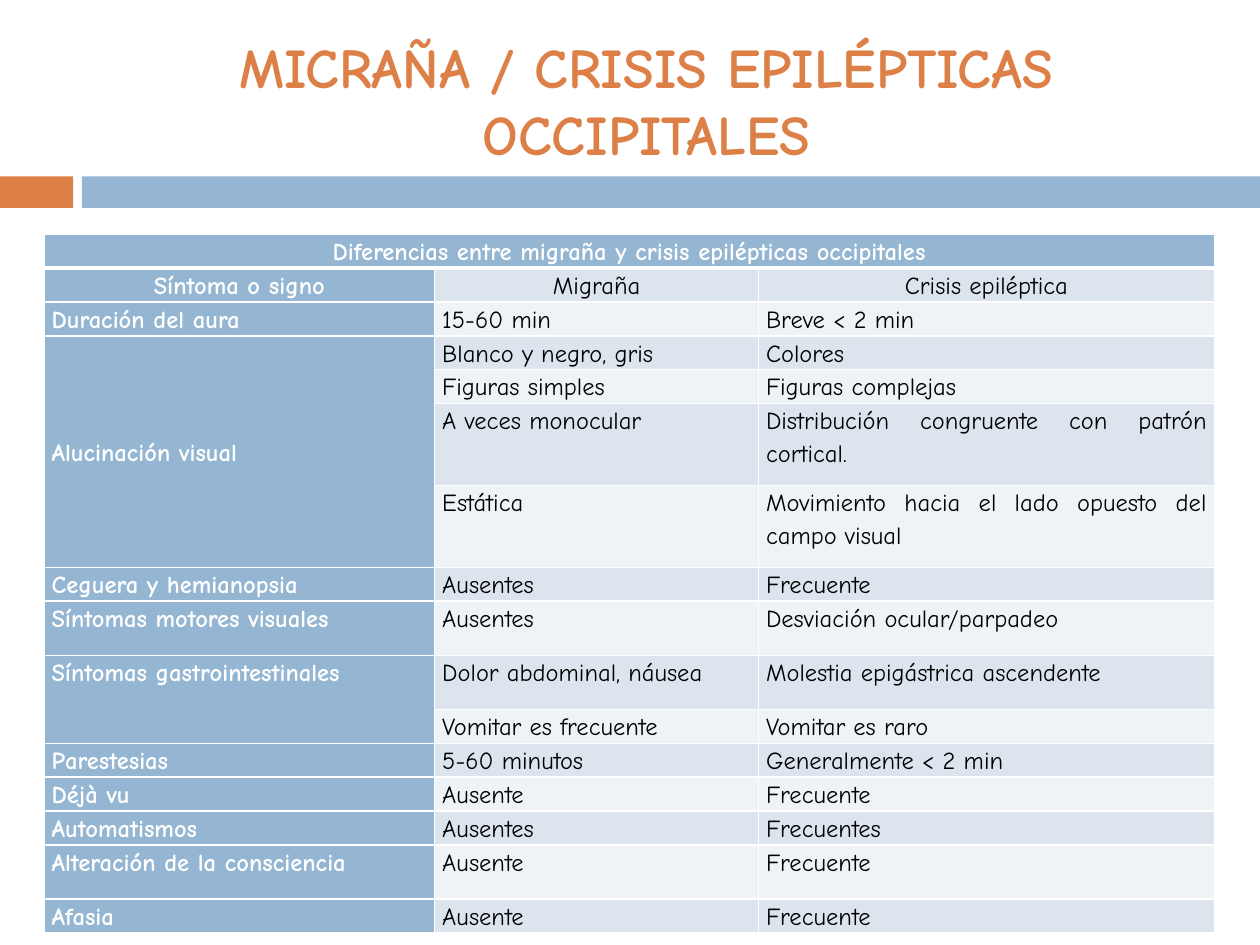
from dataclasses import dataclass

import pptx
import pptx.dml.color
import pptx.enum.shapes
import pptx.enum.text
import pptx.oxml
import pptx.oxml.ns
import pptx.util
from pptx.util import Inches, Pt

ALIGN = pptx.enum.text.PP_ALIGN
ANCHOR = pptx.enum.text.MSO_ANCHOR
WIDTH, HEIGHT = Inches(10), Inches(7.5)


@dataclass(frozen=True)
class Theme:
    font: str = "Comic Neue"
    title_size: int = 32
    body_size: int = 14
    orange: str = "DD8047"
    blue: str = "94B6D2"
    band_dark: str = "DCE5EE"
    band_light: str = "EEF3F7"
    white: str = "FFFFFF"
    black: str = "000000"


@dataclass(frozen=True)
class Area:
    left: float
    top: float
    width: float
    height: float

    def emu(self) -> tuple[int, int, int, int]:
        return (round(self.left * WIDTH), round(self.top * HEIGHT),
                round(self.width * WIDTH), round(self.height * HEIGHT))


@dataclass(frozen=True)
class Finding:
    symptom: str
    migraine: str
    seizure: str
    lines: int = 1
    symptom_rows: int = 1


THEME = Theme()
LINE_HEIGHTS = {1: 0.22, 2: 0.43, 3: 0.65}
COLUMN_WIDTHS = (3.1, 2.57, 3.62)
TITLE = "MICRAÑA / CRISIS EPILÉPTICAS OCCIPITALES"
TABLE_HEADING = "Diferencias entre migraña y crisis epilépticas occipitales"
TITLE_AREA = Area(0.067, 0.25 / 7.5, 0.892, 0.144)
TABLE_AREA = Area(0.035, 0.248, 0.929, 0.66)
STRIPES = (
    (Area(0, 1.4 / 7.5, 0.058, 0.25 / 7.5), THEME.orange),
    (Area(0.065, 1.4 / 7.5, 0.935, 0.25 / 7.5), THEME.blue),
)
FINDINGS = (
    Finding("Síntoma o signo", "Migraña", "Crisis epiléptica"),
    Finding("Duración del aura", "15-60 min", "Breve < 2 min"),
    Finding("Alucinación visual", "Blanco y negro, gris", "Colores", symptom_rows=4),
    Finding("", "Figuras simples", "Figuras complejas"),
    Finding("", "A veces monocular", "Distribución congruente con patrón cortical.", 3),
    Finding("", "Estática", "Movimiento hacia el lado opuesto del campo visual", 3),
    Finding("Ceguera y hemianopsia", "Ausentes", "Frecuente"),
    Finding("Síntomas motores visuales", "Ausentes", "Desviación ocular/parpadeo", 2),
    Finding("Síntomas gastrointestinales", "Dolor abdominal, náusea",
            "Molestia epigástrica ascendente", 2, 2),
    Finding("", "Vomitar es frecuente", "Vomitar es raro"),
    Finding("Parestesias", "5-60 minutos", "Generalmente < 2 min"),
    Finding("Déjà vu", "Ausente", "Frecuente"),
    Finding("Automatismos", "Ausentes", "Frecuentes"),
    Finding("Alteración de la consciencia", "Ausente", "Frecuente", 2),
    Finding("Afasia", "Ausente", "Frecuente"),
)


def rgb(color: str) -> pptx.dml.color.RGBColor:
    return pptx.dml.color.RGBColor.from_string(color)


def write(frame, words: str, size: int, color: str, bold: bool, align) -> None:
    frame.text = words
    paragraph = frame.paragraphs[0]
    paragraph.alignment = align
    for run in paragraph.runs:
        run.font.name = THEME.font
        run.font.size = Pt(size)
        run.font.bold = bold
        run.font.color.rgb = rgb(color)


def draw_stripe(slide, area: Area, color: str) -> None:
    stripe = slide.shapes.add_shape(
        pptx.enum.shapes.MSO_SHAPE.RECTANGLE, *area.emu())
    stripe.shadow.inherit = False
    stripe.fill.solid()
    stripe.fill.fore_color.rgb = rgb(color)
    stripe.line.fill.background()


def draw_title(slide) -> None:
    frame = slide.shapes.add_textbox(*TITLE_AREA.emu()).text_frame
    frame.word_wrap = True
    frame.vertical_anchor = ANCHOR.MIDDLE
    write(frame, TITLE, THEME.title_size, THEME.orange, True, ALIGN.CENTER)


def draw_borders(cell, widths: dict[str, int]) -> None:
    properties = cell._tc.get_or_add_tcPr()
    for position, side in enumerate("LRTB"):
        border = pptx.oxml.parse_xml(
            f'<a:ln{side} {pptx.oxml.ns.nsdecls("a")} w="{Pt(widths.get(side, 1))}">'
            f'<a:solidFill><a:srgbClr val="{THEME.white}"/></a:solidFill></a:ln{side}>')
        properties.insert(position, border)


def fill_cell(cell, words: str, fill: str, heading: bool, align,
              borders: dict[str, int]) -> None:
    cell.margin_left = cell.margin_right = Inches(0.06)
    cell.margin_top = cell.margin_bottom = 0
    cell.fill.solid()
    cell.fill.fore_color.rgb = rgb(fill)
    write(cell.text_frame, words, THEME.body_size,
          THEME.white if heading else THEME.black, heading, align)
    paragraph = cell.text_frame.paragraphs[0]
    paragraph.line_spacing = 1.15
    paragraph.font.size = Pt(THEME.body_size)
    draw_borders(cell, borders)


def draw_table(slide) -> None:
    table = slide.shapes.add_table(
        len(FINDINGS) + 1, len(COLUMN_WIDTHS), *TABLE_AREA.emu()).table
    table.first_row = table.horz_banding = False
    for column, width in zip(table.columns, COLUMN_WIDTHS):
        column.width = Inches(width)
    table.rows[0].height = Inches(LINE_HEIGHTS[1])
    for column in range(len(COLUMN_WIDTHS)):
        fill_cell(table.cell(0, column), "" if column else TABLE_HEADING,
                  THEME.blue, True, ALIGN.CENTER, {"B": 3})
    table.cell(0, 0).merge(table.cell(0, len(COLUMN_WIDTHS) - 1))

    for row, finding in enumerate(FINDINGS, start=1):
        table.rows[row].height = Inches(LINE_HEIGHTS[finding.lines])
        band = THEME.band_dark if row % 2 else THEME.band_light
        align = ALIGN.CENTER if row == 1 else ALIGN.JUSTIFY
        borders = {"T": 3} if row == 1 else {}
        entries = (finding.symptom, finding.migraine, finding.seizure)
        for column, words in enumerate(entries):
            fill_cell(table.cell(row, column), words, band if column else THEME.blue,
                      column == 0, align, borders)

    for row, finding in enumerate(FINDINGS, start=1):
        if finding.symptom_rows > 1:
            symptom = table.cell(row, 0)
            symptom.merge(table.cell(row + finding.symptom_rows - 1, 0))
            if finding.symptom_rows > 2:
                symptom.vertical_anchor = ANCHOR.MIDDLE


def main() -> None:
    deck = pptx.Presentation()
    deck.slide_width, deck.slide_height = WIDTH, HEIGHT
    slide = deck.slides.add_slide(deck.slide_layouts[6])
    for area, color in STRIPES:
        draw_stripe(slide, area, color)
    draw_title(slide)
    draw_table(slide)
    deck.save("out.pptx")


if __name__ == "__main__":
    main()
